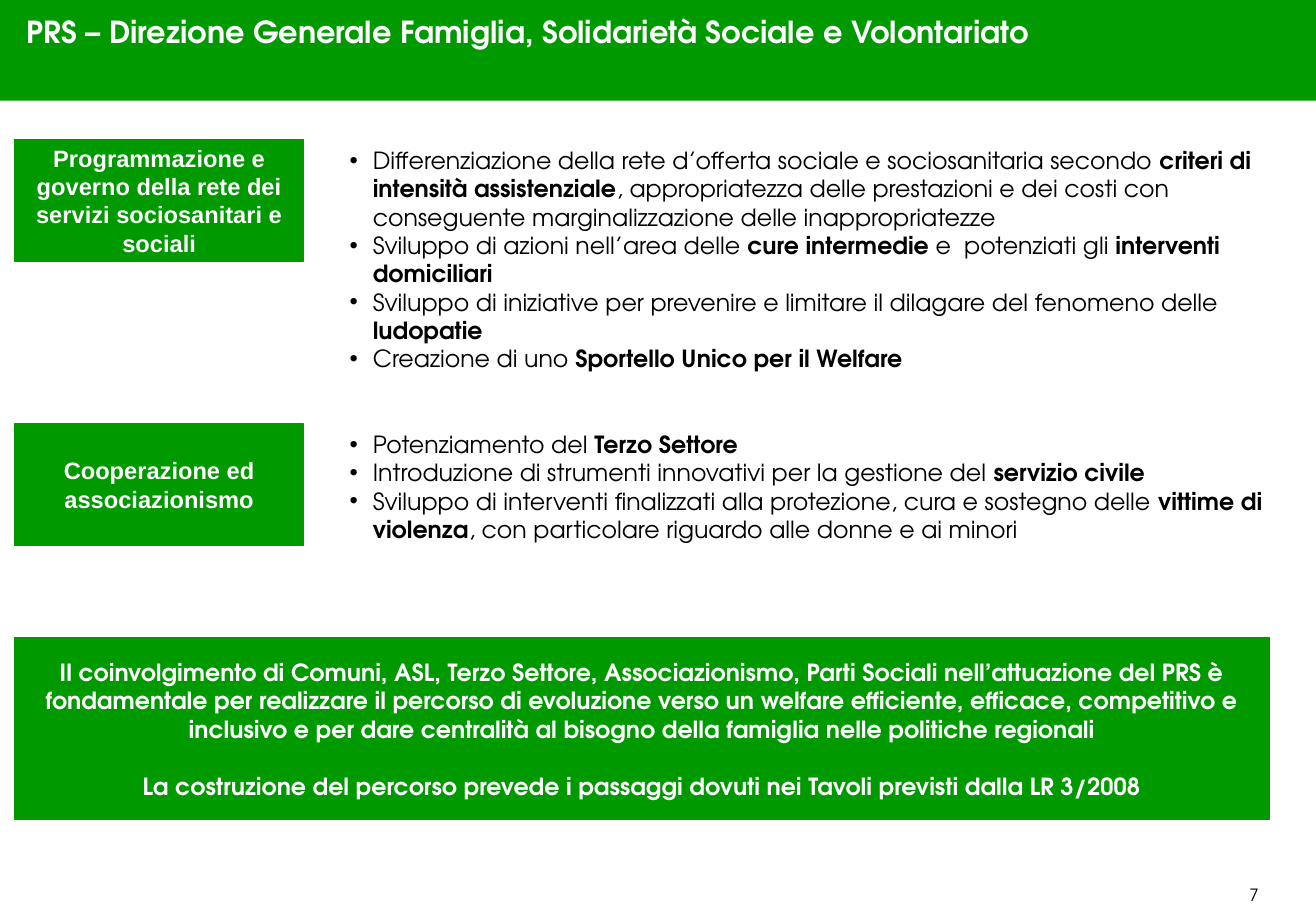
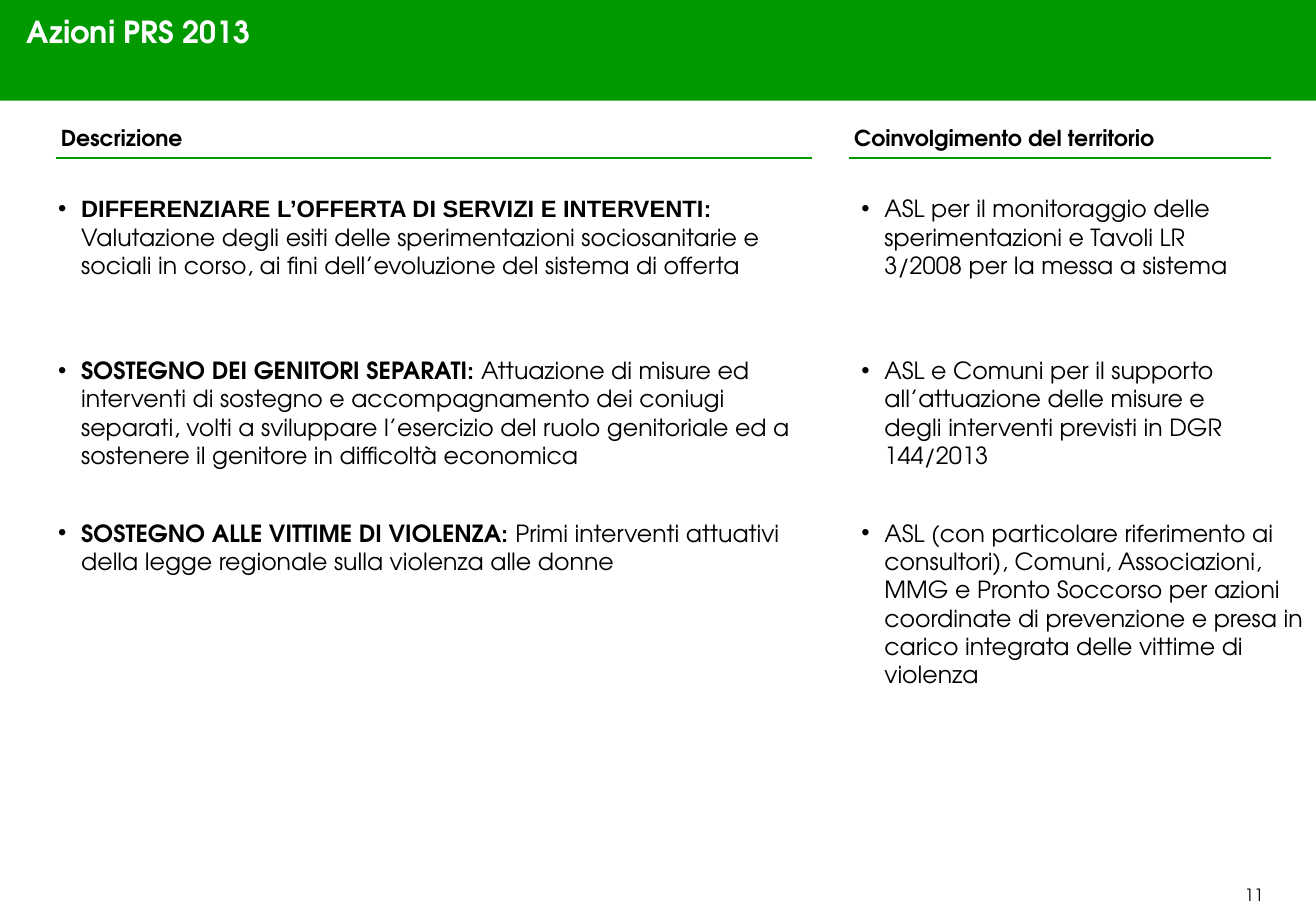
from dataclasses import dataclass
from lxml import etree
from pptx import Presentation
from pptx import util as u
from pptx.dml.color import RGBColor
from pptx.enum import shapes, text
from pptx.oxml import ns

PX = 9144


@dataclass(frozen=True)
class Theme:
    green: RGBColor = RGBColor(0x00, 0x99, 0x00)
    white: RGBColor = RGBColor(0xFF, 0xFF, 0xFF)
    black: RGBColor = RGBColor(0x00, 0x00, 0x00)
    font: str = "TeX Gyre Adventor"
    label: str = "Arial"
    title: int = 18
    body: int = 14
    head: int = 13
    page: int = 10


theme = Theme()
left, center = text.PP_ALIGN.LEFT, text.PP_ALIGN.CENTER


def write(frame, lines, size, color, align=left, bold=False, font=theme.font, bullet=False):
    frame.word_wrap = True
    for i, line in enumerate(lines):
        par = frame.paragraphs[0] if i == 0 else frame.add_paragraph()
        par.alignment = align
        for j, part in enumerate(line.split("*")):
            if part:
                run = par.add_run()
                run.text = part
                run.font.size = u.Pt(size)
                run.font.name = font
                run.font.bold = bold or j % 2 == 1
                run.font.color.rgb = color
        if bullet:
            props = par._p.get_or_add_pPr()
            props.set("marL", str(19 * PX))
            props.set("indent", str(-19 * PX))
            etree.SubElement(props, ns.qn("a:buFont")).set("typeface", theme.label)
            etree.SubElement(props, ns.qn("a:buChar")).set("char", "•")
    return frame


def block(slide, x, y, w, h):
    box = slide.shapes.add_shape(shapes.MSO_SHAPE.RECTANGLE, x * PX, y * PX, w * PX, h * PX)
    box.shadow.inherit = False
    box.fill.solid()
    box.fill.fore_color.rgb = theme.green
    box.line.color.rgb = theme.green
    box.line.width = u.Pt(0.75)
    box.text_frame.vertical_anchor = text.MSO_ANCHOR.MIDDLE
    return box


deck = Presentation()
deck.slide_width, deck.slide_height = 1083 * PX, 750 * PX
layout = deck.slide_layouts[5]

pages = []
for name, number in [
    ("PRS – Direzione Generale Famiglia, Solidarietà Sociale e Volontariato", "7"),
    ("Azioni PRS 2013", "11"),
]:
    slide = deck.slides.add_slide(layout)
    title = slide.shapes.title
    title.left, title.top, title.width, title.height = 12 * PX, 6 * PX, 1049 * PX, 40 * PX
    write(title.text_frame, [name], theme.title, theme.white, bold=True)
    title.text_frame.vertical_anchor = text.MSO_ANCHOR.TOP
    title.text_frame.auto_size = text.MSO_AUTO_SIZE.NONE
    foot = slide.shapes.add_textbox(981 * PX, 723 * PX, 102 * PX, 27 * PX)
    write(foot.text_frame, [number], theme.page, theme.black, center)
    pages.append(slide)

plan, acts = pages
band = block(plan, 0, 0, 1083, 83)
band.line.fill.background()
layout.shapes._spTree.insert(2, band._element)

topics = [
    (115, 199, "Programmazione e governo della rete dei servizi sociosanitari e sociali", [
        "Differenziazione della rete d’offerta sociale e sociosanitaria secondo *criteri di intensità assistenziale*, appropriatezza delle prestazioni e dei costi con conseguente marginalizzazione delle inappropriatezze",
        "Sviluppo di azioni nell’area delle *cure intermedie *e  potenziati gli *interventi domiciliari*",
        "Sviluppo di iniziative per prevenire e limitare il dilagare del fenomeno delle *ludopatie*",
        "Creazione di uno *Sportello Unico per il Welfare*",
    ]),
    (349, 104, "Cooperazione ed associazionismo", [
        "Potenziamento del *Terzo Settore*",
        "Introduzione di strumenti innovativi per la gestione del *servizio civile*",
        "Sviluppo di interventi finalizzati alla protezione, cura e sostegno delle *vittime di violenza*, con particolare riguardo alle donne e ai minori",
    ]),
]
for top, high, label, points in topics:
    box = plan.shapes.add_textbox(278 * PX, top * PX, 784 * PX, high * PX)
    write(box.text_frame, points, theme.body, theme.black, bullet=True)
    tag = block(plan, 12, top, 238, 100)
    write(tag.text_frame, [label], theme.body, theme.white, center, True, theme.label)

close = block(plan, 12, 525, 1033, 150)
write(close.text_frame, [
    "Il coinvolgimento di Comuni, ASL, Terzo Settore, Associazionismo, Parti Sociali nell’attuazione del PRS è fondamentale per realizzare il percorso di evoluzione verso un welfare efficiente, efficace, competitivo e inclusivo e per dare centralità al bisogno della famiglia nelle politiche regionali",
    "La costruzione del percorso prevede i passaggi dovuti nei Tavoli previsti dalla LR 3/2008",
], theme.body, theme.white, center, True)
close.text_frame.paragraphs[1].space_before = u.Pt(17)

for x, wide, head in [(46, 622, "Descrizione"), (699, 347, "Coinvolgimento del territorio")]:
    box = acts.shapes.add_textbox(x * PX, 98 * PX, wide * PX, 32 * PX)
    frame = write(box.text_frame, [head], theme.head, theme.black, bold=True)
    frame.margin_left = frame.margin_right = 4 * PX
    rule = acts.shapes.add_connector(
        shapes.MSO_CONNECTOR.STRAIGHT, x * PX, 130 * PX, (x + wide) * PX, 130 * PX)
    rule.line.color.rgb = theme.green
    rule.line.width = u.Pt(1.5)
    etree.SubElement(rule._element.spPr, ns.qn("a:effectLst"))

rows = [
    (155, 81, 346,
     "*DIFFERENZIARE L’OFFERTA DI SERVIZI E INTERVENTI**: *Valutazione degli esiti delle sperimentazioni sociosanitarie e sociali in corso, ai fini dell’evoluzione del sistema di offerta",
     "ASL per il monitoraggio delle sperimentazioni e Tavoli LR 3/2008 per la messa a sistema"),
    (288, 104, 346,
     "*SOSTEGNO DEI GENITORI SEPARATI: *Attuazione di misure ed interventi di sostegno e accompagnamento dei coniugi separati, volti a sviluppare l’esercizio del ruolo genitoriale ed a sostenere il genitore in difficoltà economica",
     "ASL e Comuni per il supporto all’attuazione delle misure e degli interventi previsti in DGR 144/2013"),
    (422, 151, 384,
     "*SOSTEGNO ALLE VITTIME DI VIOLENZA: *Primi interventi attuativi della legge regionale sulla violenza alle donne",
     "ASL (con particolare riferimento ai consultori), Comuni, Associazioni, MMG e Pronto Soccorso per azioni coordinate di prevenzione e presa in carico integrata delle vittime di violenza"),
]
for top, high, span, task, role in rows:
    for x, wide, words in [(38, 630, task), (699, span, role)]:
        box = acts.shapes.add_textbox(x * PX, top * PX, wide * PX, high * PX)
        frame = write(box.text_frame, [words], theme.body, theme.black, bullet=True)
        if words.startswith("*DIFF"):
            frame.paragraphs[0].runs[0].font.name = theme.label

deck.save("out.pptx")
